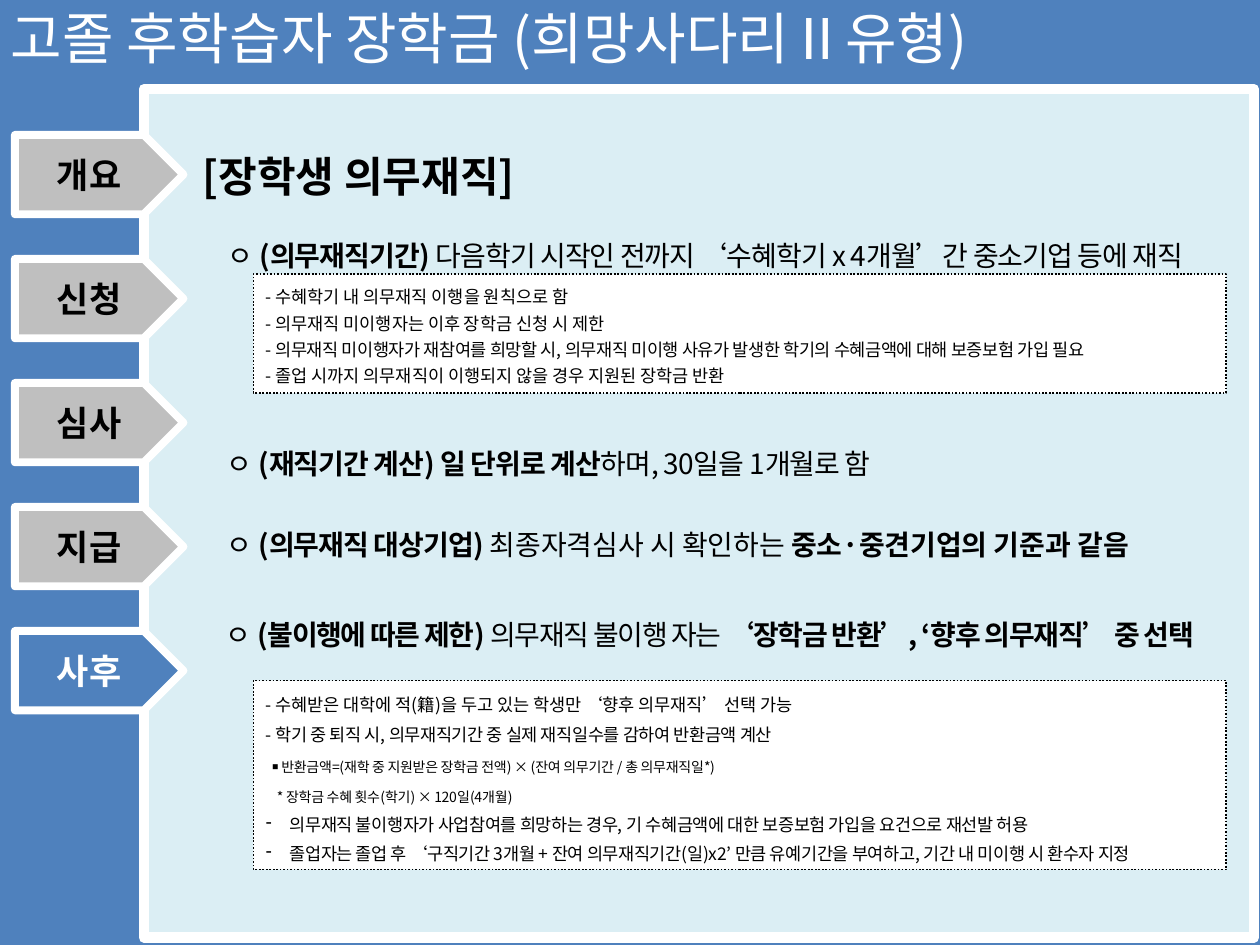
from lxml import etree
from pptx import Presentation
from pptx import util as u
from pptx.dml.color import RGBColor
from pptx.enum import dml, shapes, text
from pptx.oxml import ns

BLUE = RGBColor(0x4F, 0x81, 0xBD)
PALE = RGBColor(0xDB, 0xEE, 0xF4)
GRAY = RGBColor(0xBF, 0xBF, 0xBF)
WHITE = RGBColor(0xFF, 0xFF, 0xFF)
BLACK = RGBColor(0, 0, 0)


class SlideBuilder:
    font = "Noto Sans CJK KR"

    def __init__(self, slide):
        self.slide = slide

    def background(self, color):
        fill = self.slide.background.fill
        fill.solid()
        fill.fore_color.rgb = color

    def block(self, kind, box, color, line_color, line_width, dash=None):
        shape = self.slide.shapes.add_shape(kind, *map(u.Cm, box))
        shape.shadow.inherit = False
        shape.fill.solid()
        shape.fill.fore_color.rgb = color
        shape.line.color.rgb = line_color
        shape.line.width = u.Pt(line_width)
        if dash:
            shape.line.dash_style = dash
        shape.text_frame.vertical_anchor = text.MSO_ANCHOR.MIDDLE
        return shape

    def run(self, paragraph, words, size, color=BLACK, bold=False, spacing=0):
        run = paragraph.add_run()
        run.text = words
        run.font.size = u.Pt(size)
        run.font.bold = bold
        run.font.color.rgb = color
        run.font.name = self.font
        properties = run.font._element
        properties.set("spc", str(round(spacing * 100)))
        etree.SubElement(properties, ns.qn("a:ea"), typeface=self.font)

    def text_box(self, box, wrap=True):
        shape = self.slide.shapes.add_textbox(*map(u.Cm, box))
        shape.text_frame.word_wrap = wrap
        shape.text_frame.auto_size = text.MSO_AUTO_SIZE.SHAPE_TO_FIT_TEXT
        return shape.text_frame.paragraphs[0]

    def heading(self, box, words, size, color, bold=False, wrap=True):
        self.run(self.text_box(box, wrap), words, size, color, bold)

    def item(self, left, top, height, runs, leading=None):
        paragraph = self.text_box((left, top, 21.06, height))
        if leading:
            paragraph.line_spacing = u.Pt(leading)
        self.run(paragraph, "ㅇ ", 16)
        for words, bold, spacing in runs:
            self.run(paragraph, words, 16, bold=bold, spacing=spacing)

    def note(self, top, height, leading, lines):
        shape = self.block(shapes.MSO_SHAPE.RECTANGLE, (5.11, top, 19.61, height),
                           WHITE, BLACK, 1, dml.MSO_LINE.ROUND_DOT)
        frame = shape.text_frame
        for index, (words, size, spacing, margin, bullet) in enumerate(lines):
            paragraph = frame.add_paragraph() if index else frame.paragraphs[0]
            paragraph.alignment = text.PP_ALIGN.LEFT
            paragraph.line_spacing = u.Pt(leading)
            properties = paragraph._p.get_or_add_pPr()
            properties.set("marL", str(u.Cm(margin)))
            if bullet:
                properties.set("indent", str(-u.Cm(margin)))
                etree.SubElement(properties, ns.qn("a:buChar"), char=bullet)
            self.run(paragraph, words, size, spacing=spacing)

    def tab(self, top, words, active):
        shape = self.block(shapes.MSO_SHAPE.PENTAGON, (0.3, top, 3.4, 1.6),
                           BLUE if active else GRAY, WHITE, 4.5)
        paragraph = shape.text_frame.paragraphs[0]
        paragraph.alignment = text.PP_ALIGN.CENTER
        self.run(paragraph, words, 20, WHITE if active else BLACK, bold=True)


def main():
    presentation = Presentation()
    presentation.slide_width = u.Cm(25.4)
    presentation.slide_height = u.Cm(19.05)
    builder = SlideBuilder(presentation.slides.add_slide(presentation.slide_layouts[6]))
    builder.background(BLUE)
    builder.block(shapes.MSO_SHAPE.RECTANGLE, (2.9, 1.8, 22.38, 17.1), PALE, WHITE, 6)
    builder.heading((-0.03, -0.05, 22.73, 1.62), "고졸 후학습자 장학금 (희망사다리Ⅱ유형)", 32, WHITE)
    builder.heading((3.84, 2.9, 7.42, 1.27), "[장학생 의무재직]", 24, BLACK, bold=True, wrap=False)

    builder.item(4.34, 4.4, 1.09, [
        ("(의무재직기간) ", True, -0.5),
        ("다음학기 시작인 전까지 ‘수혜학기 x 4개월’간 중소기업 등에 재직", False, -0.5),
    ], leading=27)
    builder.note(5.53, 2.39, 15, [
        ("- 수혜학기 내 의무재직 이행을 원칙으로 함", 10, 0, 0, None),
        ("- 의무재직 미이행자는 이후 장학금 신청 시 제한", 10, 0, 0, None),
        ("- 의무재직 미이행자가 재참여를 희망할 시, 의무재직 미이행 사유가 발생한 학기의 "
         "수혜금액에 대해 보증보험 가입 필요", 10, -0.2, 0, None),
        ("- 졸업 시까지 의무재직이 이행되지 않을 경우 지원된 장학금 반환", 10, 0, 0, None),
    ])
    builder.item(4.32, 8.61, 1.22, [
        ("(재직기간 계산) 일 단위로 계산", True, -0.5),
        ("하며, 30일을 1개월로 함", False, -0.5),
    ], leading=27)
    builder.item(4.32, 10.52, 0.94, [
        ("(의무재직 대상기업) ", True, -0.5),
        ("최종자격심사 시 확인하는 ", False, 0),
        ("중소·중견기업의 기준과 같음", True, 0),
    ])
    builder.item(4.29, 12.32, 0.94, [
        ("(불이행에 따른 제한) ", True, -0.7),
        ("의무재직 불이행 자는 ", False, -0.7),
        ("‘장학금 반환’, ‘향후 의무재직’ 중 선택", True, -0.7),
    ])
    builder.note(13.72, 3.81, 17, [
        ("- 수혜받은 대학에 적(籍)을 두고 있는 학생만 ‘향후 의무재직’ 선택 가능", 10, 0, 0, None),
        ("- 학기 중 퇴직 시, 의무재직기간 중 실제 재직일수를 감하여 반환금액 계산", 10, -0.2, 0, None),
        ("￭ 반환금액=(재학 중 지원받은 장학금 전액) × (잔여 의무기간 / 총 의무재직일*)",
         8, -0.2, 0.12, None),
        ("* 장학금 수혜 횟수(학기) × 120일(4개월)", 8, -0.2, 0.22, None),
        ("의무재직 불이행자가 사업참여를 희망하는 경우, 기 수혜금액에 대한 보증보험 가입을 "
         "요건으로 재선발 허용", 10, -0.2, 0.48, "-"),
        ("졸업자는 졸업 후 ‘구직기간 3개월 + 잔여 의무재직기간(일)x2’ 만큼 유예기간을 부여하고, "
         "기간 내 미이행 시 환수자 지정", 10, -0.2, 0.48, "-"),
    ])
    for index, words in enumerate(("개요", "신청", "심사", "지급", "사후")):
        builder.tab(2.72 + 2.5 * index, words, active=words == "사후")
    presentation.save("out.pptx")


if __name__ == "__main__":
    main()
